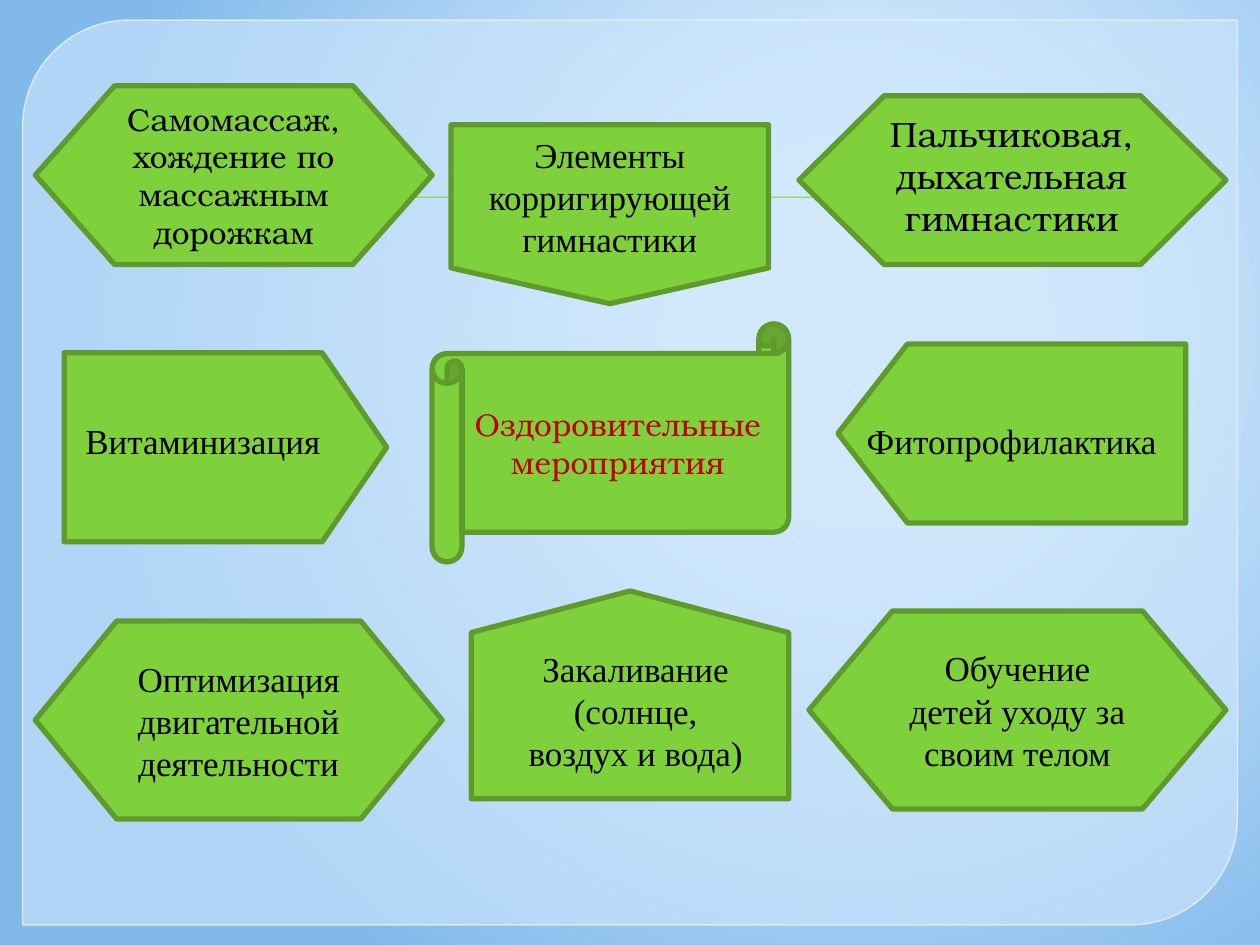
from lxml.etree import SubElement
from pptx import Presentation
from pptx.dml.color import RGBColor
from pptx.enum.shapes import MSO_SHAPE as Kind
from pptx.enum.text import MSO_ANCHOR as Anchor, PP_ALIGN as Align
from pptx.oxml import parse_xml
from pptx.oxml.ns import nsdecls, qn
from pptx.util import Inches, Pt

COLS, ROWS = 100, 75
CELL = Inches(0.1)
GREEN, EDGE, BLACK, RED = "7FD13B", "5E9B2C", "000000", "C00000"
SERIF, BONUM = "Times New Roman", "TeX Gyre Bonum"
HEX, FLAG = Kind.FLOWCHART_PREPARATION, Kind.FLOWCHART_OFFPAGE_CONNECTOR

HEXES = [
    ((2.8, 6.8, 31.5, 14.2), "Самомассаж, хождение по массажным дорожкам", 18, BONUM),
    ((63.4, 7.6, 33.9, 13.4), "", 20, BONUM),
    ((2.8, 49.3, 32.3, 15.7), "Оптимизация двигательной деятельности", 20, SERIF),
    ((64.2, 48.5, 33.1, 15.7), "Обучение детей уходу за своим телом", 20, SERIF),
]
FLAGS = [
    ((35.8, 9.9, 25.2, 14.2), 0, "Элементы корригирующей гимнастики"),
    ((10.4, 22.7, 15, 25.6), 270, ""),
    ((73.2, 20.6, 14.2, 27.6), 90, ""),
    ((37.4, 46.9, 25.2, 16.5), 180, ""),
]
LABELS = [
    ((3.5, 32.8, 25.2, 4.4), "Витаминизация", SERIF),
    ((67.3, 32.8, 26, 4.4), "Фитопрофилактика", SERIF),
    ((40.6, 50.9, 19.7, 11.1), "Закаливание\n(солнце, воздух и вода)", SERIF),
    ((67.3, 8.4, 26, 11.1), "Пальчиковая, дыхательная гимнастики", BONUM),
]


def cells(box):
    return [round(n * CELL) for n in box]


def paint(color, value):
    color.rgb = RGBColor.from_string(value)


def fade(fill, share):
    tone = fill._xPr.find(qn("a:solidFill"))[0]
    SubElement(tone, qn("a:alpha"), val=str(share * 1000))


def write(frame, text, size, font, color=BLACK):
    frame.word_wrap = True
    frame.text = text
    for par in frame.paragraphs:
        par.alignment = Align.CENTER
        par.font.size = Pt(size)
        par.font.name = font
        paint(par.font.color, color)


def draw(slide, kind, box, fill=GREEN, edge=EDGE, width=3):
    shape = slide.shapes.add_shape(kind, *cells(box))
    shape.shadow.inherit = False
    shape.fill.solid()
    paint(shape.fill.fore_color, fill)
    if edge:
        shape.line.width = Pt(width)
        paint(shape.line.color, edge)
    else:
        shape.line.fill.background()
    return shape


def block(slide, kind, box, text="", size=20, font=SERIF, color=BLACK):
    shape = draw(slide, kind, box)
    if text:
        shape.text_frame.vertical_anchor = Anchor.MIDDLE
        write(shape.text_frame, text, size, font, color)
    return shape


def label(slide, box, text, font):
    write(slide.shapes.add_textbox(*cells(box)).text_frame, text, 20, font)


def glow(slide):
    stops = [(0, "E1F1FF"), (20, "DFF0FF"), (100, "81B9EB")]
    marks = "".join(
        f'<a:gs pos="{at * 1000}"><a:srgbClr val="{tone}"/></a:gs>' for at, tone in stops
    )
    fill = slide.background.fill
    fill.gradient()
    old = fill._xPr.find(qn("a:gradFill"))
    new = parse_xml(
        f'<a:gradFill {nsdecls("a")} rotWithShape="1"><a:gsLst>{marks}</a:gsLst>'
        '<a:path path="circle"><a:fillToRect l="68000" t="35000" r="32000" b="65000"/>'
        "</a:path></a:gradFill>"
    )
    fill._xPr.replace(old, new)


def panel(slide):
    kind = Kind.ROUND_2_DIAG_RECTANGLE
    shape = draw(slide, kind, (1.8, 1.6, 96.4, 71.8), "CBE5FC", "E0F0FF", 0.87)
    shape.adjustments[0] = 0.118
    shape.adjustments[1] = 0
    fade(shape.fill, 65)
    fade(shape.line.fill, 88)
    draw(slide, Kind.RECTANGLE, (6.4, 15.6, 87.5, 0.1), edge=None)


def main():
    deck = Presentation()
    deck.slide_width, deck.slide_height = COLS * CELL, ROWS * CELL
    slide = deck.slides.add_slide(deck.slide_layouts[6])
    glow(slide)
    panel(slide)
    block(slide, Kind.HORIZONTAL_SCROLL, (34.3, 25.7, 28.3, 18.9),
          "Оздоровительные мероприятия", 18, BONUM, RED)
    for box, turn, text in FLAGS:
        block(slide, FLAG, box, text).rotation = turn
    for box, text, size, font in HEXES:
        block(slide, HEX, box, text, size, font)
    for box, text, font in LABELS:
        label(slide, box, text, font)
    deck.save("out.pptx")


if __name__ == "__main__":
    main()
